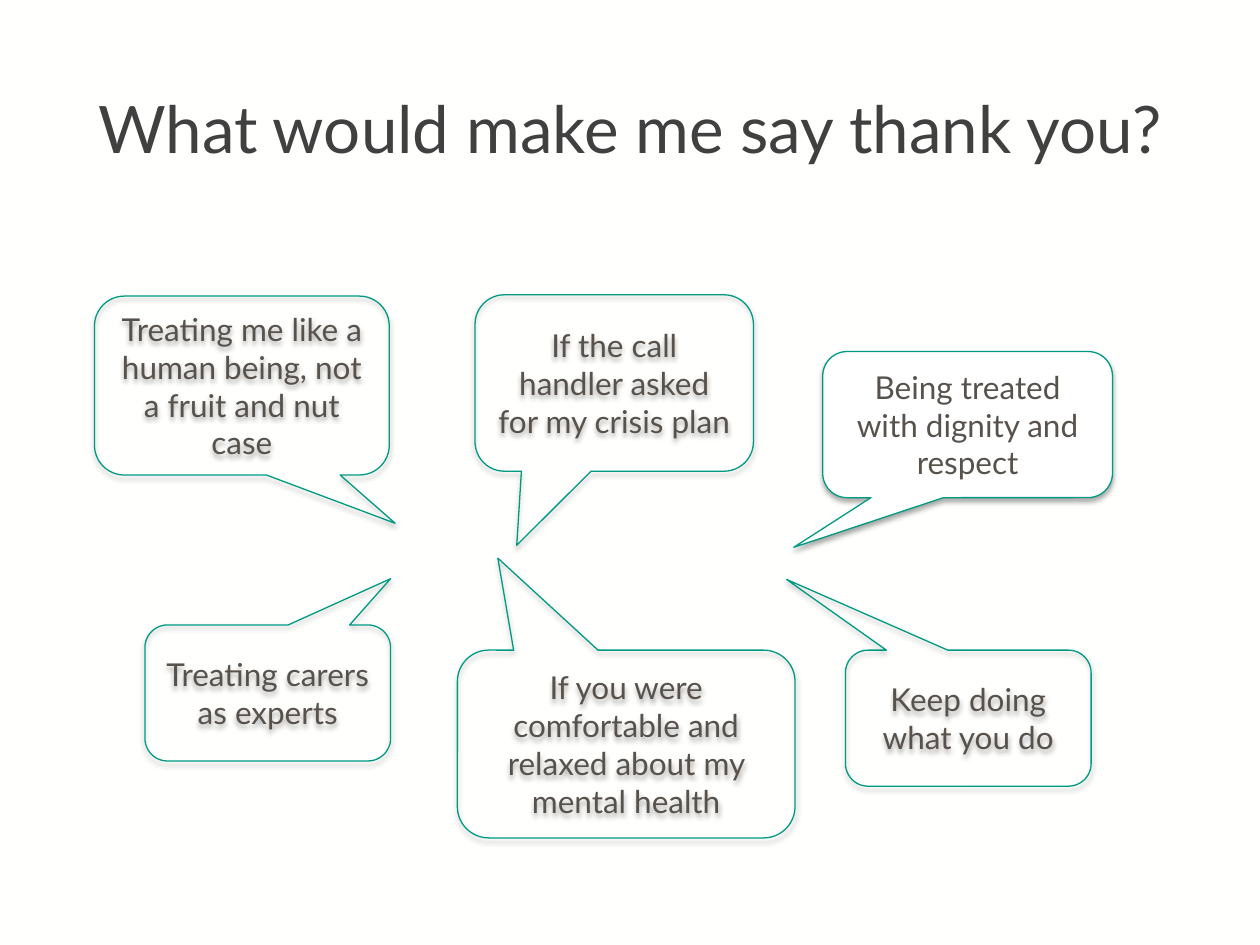
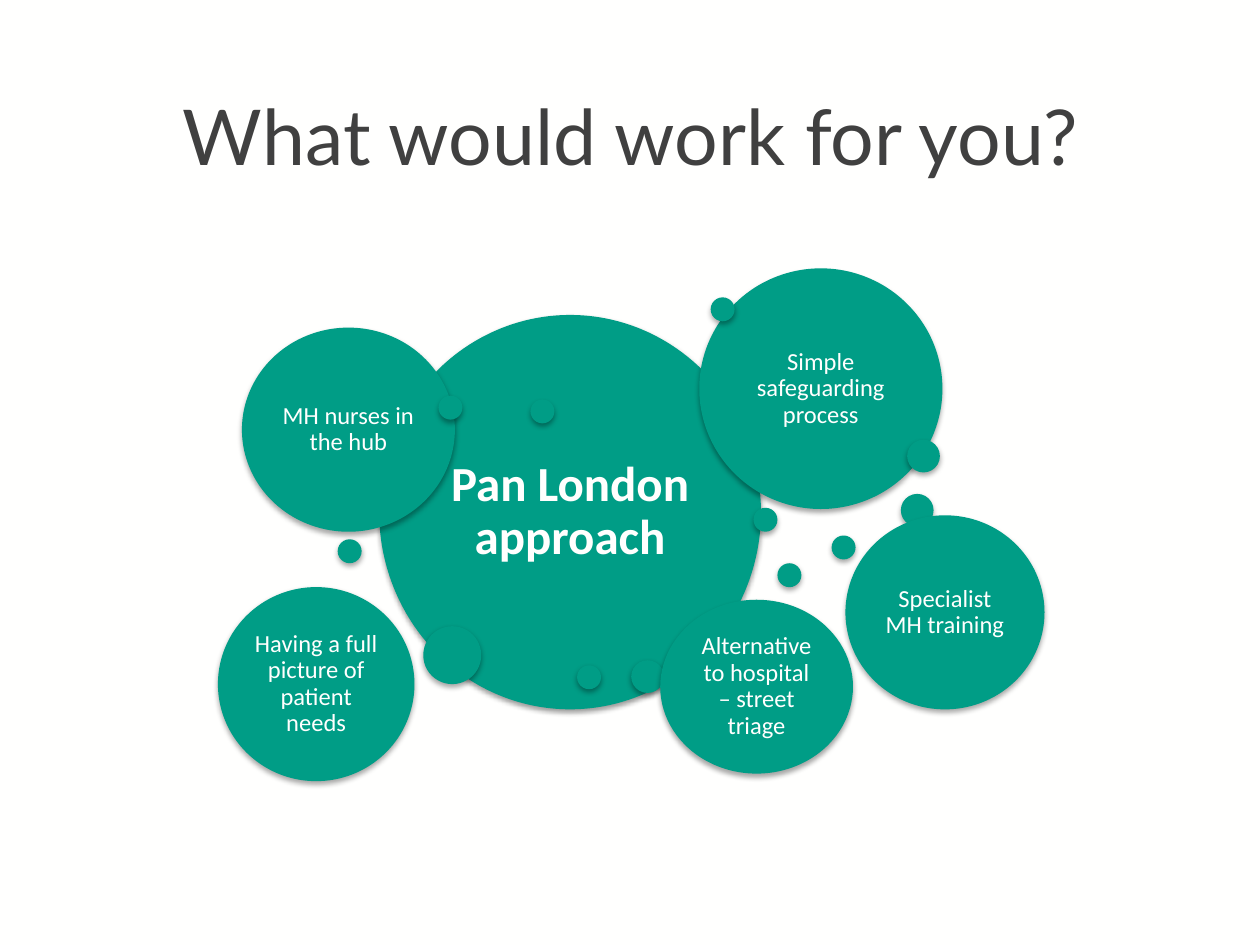
from dataclasses import dataclass

from lxml.etree import SubElement
from pptx import Presentation
from pptx.dml.color import RGBColor
from pptx.enum.shapes import MSO_SHAPE
from pptx.enum.text import MSO_ANCHOR, MSO_AUTO_SIZE, PP_ALIGN
from pptx.oxml.ns import qn
from pptx.util import Inches, Pt

BACKGROUND, WHITE = "FFFFFE", "FFFFFF"
TITLE_COLOUR, CALLOUT_TEXT = "404040", "58524D"
OUTLINE, BUBBLE = "009A83", "009D86"
TITLE_FONT, BUBBLE_FONT = "Lato", "Calibri"
SLIDE_WIDTH, SLIDE_HEIGHT, COLUMNS = 10, 7.5, 100
CELL = SLIDE_WIDTH / COLUMNS
SMALL, MEDIUM, LARGE = 1.9, 2.6, 4.6


@dataclass
class Box:
    """A rectangle measured in square grid cells."""
    left: float
    top: float
    width: float
    height: float

    def inside(self, left, top, width, height):
        """Return a box placed relative to this one."""
        return Box(self.left + left, self.top + top, width, height)

    def lengths(self):
        """Return left, top, width and height as slide lengths."""
        return [Inches(cells * CELL)
                for cells in (self.left, self.top, self.width, self.height)]


TITLE_BOX = Box(5.5, 6.5, 89.1, 8.3)
CALLOUT_BOX = Box(7.5, 23.4, 80.8, 43.1)
BUBBLE_BOX = Box(17.3, 21.3, 65.6, 40.7)

CALLOUTS = [
    ("Treating me like a human being, not a fruit and nut case",
     (0, 0.1, 23.4, 14.2), (0.52, 0.77), None),
    ("If the call handler asked for my crisis plan",
     (30.2, 0, 22.1, 14), (-0.35, 0.92), None),
    ("Being treated with dignity and respect",
     (57.8, 4.5, 23, 11.6), (-0.6, 0.84), WHITE),
    ("Treating carers as experts",
     (4, 26.2, 19.5, 10.8), (0.5, -0.84), None),
    ("If you were comfortable and relaxed about my mental health",
     (28.8, 28.2, 26.8, 14.9), (-0.38, -0.99), None),
    ("Keep doing what you do",
     (59.6, 28.2, 19.5, 10.8), (-0.74, -1.02), None),
]

CENTRE = ("Pan London approach", (12.8, 3.7, 30.3, 31.3))
IDEAS = [
    ("MH nurses in the hub", (1.9, 4.7, 16.9, 16.2)),
    ("Simple safeguarding process", (38.2, 0, 19.3, 19.1)),
    ("Alternative to hospital – street triage", (35.1, 26.3, 15.3, 13.8)),
    ("Having a full picture of patient needs", (0, 25.3, 15.6, 15.4)),
    ("Specialist MH training", (49.8, 19.6, 15.8, 15.4)),
]
DOTS_BEHIND = [
    (48.7, 21.2, SMALL), (42.5, 19, SMALL), (32.8, 31.1, MEDIUM),
    (24.8, 10.4, SMALL), (9.5, 21.5, SMALL), (54.2, 17.9, MEDIUM),
    (16.3, 28.4, LARGE), (9.1, 29.6, SMALL), (55.2, 25.9, SMALL),
    (44.4, 23.4, SMALL), (28.5, 31.5, SMALL),
]
DOTS_IN_FRONT = [(54.7, 13.6, MEDIUM), (17.5, 10.1, SMALL), (39.1, 2.3, SMALL)]


def colour(hex_string):
    """Turn a hex string into a colour."""
    return RGBColor.from_string(hex_string)


def write_text(shape, text, *, size, font, text_colour, bold=False,
               anchor=MSO_ANCHOR.MIDDLE, inset=None, line_spacing=None):
    """Write one centred, formatted paragraph into a shape."""
    frame = shape.text_frame
    frame.word_wrap = True
    frame.auto_size = MSO_AUTO_SIZE.NONE
    frame.vertical_anchor = anchor
    if inset is not None:
        frame.margin_left = frame.margin_right = Inches(inset)
        frame.margin_top = frame.margin_bottom = Inches(inset)
    paragraph = frame.paragraphs[0]
    paragraph.alignment = PP_ALIGN.CENTER
    paragraph.line_spacing = line_spacing
    run = paragraph.add_run()
    run.text = text
    run.font.size = Pt(size)
    run.font.name = font
    run.font.bold = bold
    run.font.color.rgb = colour(text_colour)


def add_shadow(shape, opacity=35, distance=1.8):
    """Give a shape a soft black shadow falling straight down."""
    shape.shadow.inherit = False
    effects = shape._element.spPr.find(qn("a:effectLst"))
    shadow = SubElement(effects, qn("a:outerShdw"), blurRad=str(Pt(3.1)),
                        dist=str(Pt(distance)), dir="5400000", rotWithShape="0")
    black = SubElement(shadow, qn("a:srgbClr"), val="000000")
    SubElement(black, qn("a:alpha"), val=str(opacity * 1000))


def add_filled_shape(shapes, kind, box, fill=None, line=None):
    """Add a preset shape with an optional fill and outline."""
    shape = shapes.add_shape(kind, *box.lengths())
    if fill:
        shape.fill.solid()
        shape.fill.fore_color.rgb = colour(fill)
    else:
        shape.fill.background()
    if line:
        shape.line.color.rgb = colour(line)
        shape.line.width = Pt(0.75)
    else:
        shape.line.fill.background()
    return shape


def add_titled_slide(presentation, title, size):
    """Add a title-only slide and format its title."""
    slide = presentation.slides.add_slide(presentation.slide_layouts[5])
    placeholder = slide.shapes.title
    (placeholder.left, placeholder.top,
     placeholder.width, placeholder.height) = TITLE_BOX.lengths()
    write_text(placeholder, title, size=size, font=TITLE_FONT,
               text_colour=TITLE_COLOUR, anchor=MSO_ANCHOR.TOP)
    return slide


def add_callouts(slide, region):
    """Place the speech callouts in their region."""
    for text, place, pointer, fill in CALLOUTS:
        callout = add_filled_shape(
            slide.shapes, MSO_SHAPE.ROUNDED_RECTANGULAR_CALLOUT,
            region.inside(*place), fill, OUTLINE)
        callout.adjustments[0], callout.adjustments[1] = pointer
        add_shadow(callout)
        write_text(callout, text, size=18, font=TITLE_FONT,
                   text_colour=CALLOUT_TEXT)


def add_bubble(shapes, box, **shadow):
    """Add one filled circle with a shadow."""
    bubble = add_filled_shape(shapes, MSO_SHAPE.OVAL, box, BUBBLE)
    add_shadow(bubble, **shadow)
    return bubble


def add_dots(shapes, region, dots):
    """Place small round dots in the region."""
    for left, top, diameter in dots:
        add_bubble(shapes, region.inside(left, top, diameter, diameter))


def add_bubble_cluster(slide, region):
    """Place the central bubble, the ideas around it and the dots."""
    shapes = slide.shapes.add_group_shape().shapes
    text, place = CENTRE
    centre = add_bubble(shapes, region.inside(*place), opacity=38, distance=1.6)
    write_text(centre, text, size=28, font=BUBBLE_FONT, text_colour=BACKGROUND,
               bold=True, inset=0.12, line_spacing=0.9)
    add_dots(shapes, region, DOTS_BEHIND)
    for text, place in IDEAS:
        idea = add_bubble(shapes, region.inside(*place))
        write_text(idea, text, size=14, font=BUBBLE_FONT,
                   text_colour=BACKGROUND, inset=0.06, line_spacing=0.9)
    add_dots(shapes, region, DOTS_IN_FRONT)


def main():
    """Build and save the presentation."""
    presentation = Presentation()
    presentation.slide_width = Inches(SLIDE_WIDTH)
    presentation.slide_height = Inches(SLIDE_HEIGHT)
    background = presentation.slide_master.background.fill
    background.solid()
    background.fore_color.rgb = colour(BACKGROUND)
    thanks = add_titled_slide(
        presentation, "What would make me say thank you?", 37.4)
    add_callouts(thanks, CALLOUT_BOX)
    ideas = add_titled_slide(presentation, "What would work for you?", 44)
    add_bubble_cluster(ideas, BUBBLE_BOX)
    presentation.save("out.pptx")


if __name__ == "__main__":
    main()
